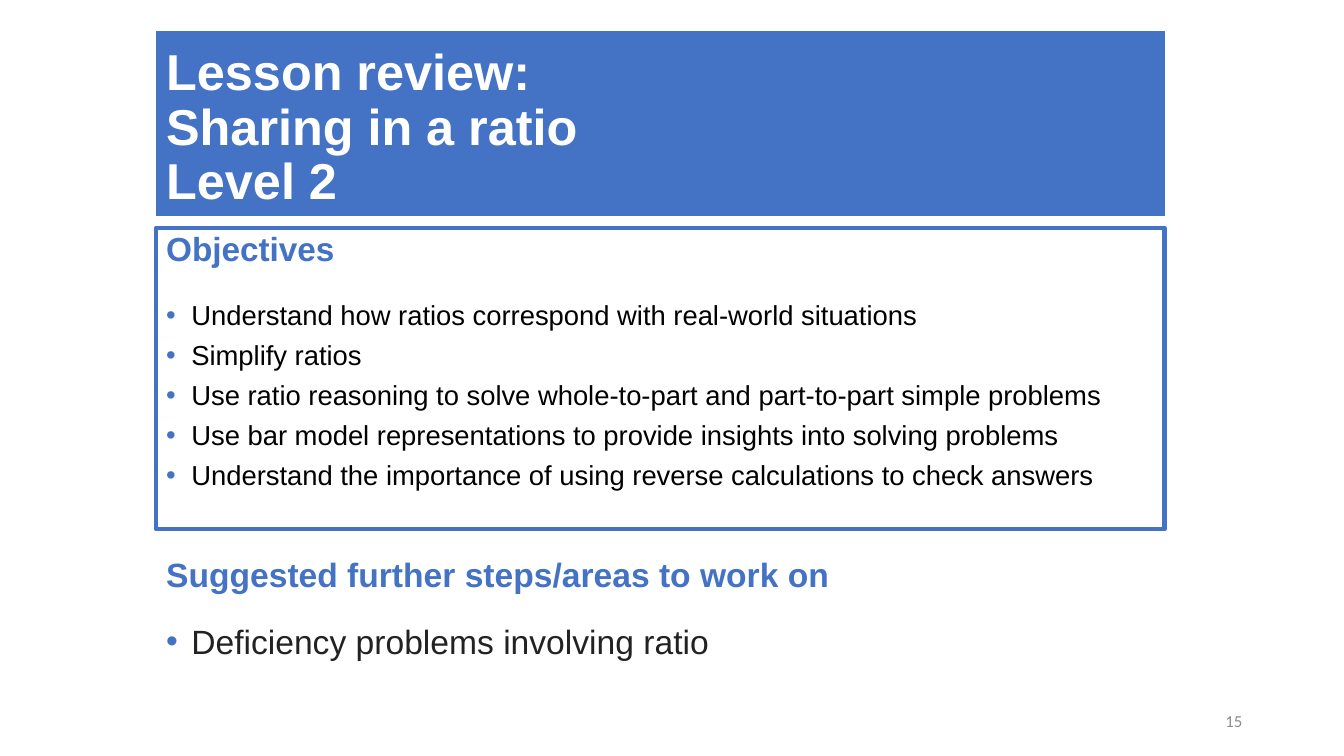
from lxml.etree import SubElement
from pptx import Presentation
from pptx.dml.color import RGBColor
from pptx.enum.shapes import MSO_SHAPE
from pptx.enum.text import MSO_ANCHOR, PP_ALIGN
from pptx.oxml.ns import qn
from pptx.util import Inches, Pt

COLORS = {"blue": "4472C4", "white": "FFFFFF", "black": "000000",
          "dark": "222222", "grey": "8C8C8C"}
OBJECTIVES = [
    "Understand how ratios correspond with real-world situations",
    "Simplify ratios",
    "Use ratio reasoning to solve whole-to-part and part-to-part simple problems",
    "Use bar model representations to provide insights into solving problems",
    "Understand the importance of using reverse calculations to check answers",
]


def rgb(name):
    """Return the named colour."""
    return RGBColor.from_string(COLORS[name])


def add_bullet(p):
    """Give a paragraph a hanging blue bullet."""
    pPr = p._p.get_or_add_pPr()
    pPr.set("marL", str(Inches(0.25)))
    pPr.set("indent", str(-Inches(0.25)))
    SubElement(SubElement(pPr, qn("a:buClr")), qn("a:srgbClr"), val=COLORS["blue"])
    SubElement(pPr, qn("a:buFont"), typeface="Arial")
    SubElement(pPr, qn("a:buChar"), char="•")


def add_text(tf, text, size=24, color="blue", bold=False, font="Arial",
             align=PP_ALIGN.LEFT, spacing=1.0, before=0, after=0, bullet=False):
    """Add a formatted paragraph, using the first one while it is empty."""
    p = tf.paragraphs[0] if not tf.text else tf.add_paragraph()
    p.text = text
    p.alignment, p.line_spacing = align, spacing
    p.space_before, p.space_after = Pt(before), Pt(after)
    for r in p.runs:
        r.font.size, r.font.bold, r.font.name = Pt(size), bold, font
        r.font.color.rgb = rgb(color)
    if bullet:
        add_bullet(p)


def add_frame(s, box, anchor=MSO_ANCHOR.TOP):
    """Add a wrapping text box and return its text frame."""
    tf = s.shapes.add_textbox(*map(Inches, box)).text_frame
    tf.word_wrap, tf.vertical_anchor = True, anchor
    return tf


def add_panel(s, box, line, fill=None, anchor=MSO_ANCHOR.TOP):
    """Add a blue-outlined rectangle and return its text frame."""
    sp = s.shapes.add_shape(MSO_SHAPE.RECTANGLE, *map(Inches, box))
    sp.shadow.inherit = False
    sp.line.color.rgb, sp.line.width = rgb("blue"), Pt(line)
    if fill:
        sp.fill.solid()
        sp.fill.fore_color.rgb = rgb(fill)
    else:
        sp.fill.background()
    tf = sp.text_frame
    tf.word_wrap, tf.vertical_anchor = True, anchor
    return tf


def add_title(s, box):
    """Place the filled lesson title."""
    tf = add_panel(s, box, 0.75, "blue", MSO_ANCHOR.BOTTOM)
    add_text(tf, "Lesson review:\vSharing in a ratio\vLevel 2", size=36,
             color="white", bold=True, spacing=0.9)


def add_objectives(s, box):
    """Place the outlined list of objectives."""
    tf = add_panel(s, box, 3)
    add_text(tf, "Objectives", size=23.8, bold=True, spacing=0.91, after=21)
    for text in OBJECTIVES:
        add_text(tf, text, size=19.6, color="black", after=5, bullet=True)


def add_next_steps(s, box):
    """Place the suggested further steps."""
    tf = add_frame(s, box)
    add_text(tf, "Suggested further steps/areas to work on", bold=True, spacing=1.11)
    add_text(tf, "Deficiency problems involving ratio", color="dark",
             spacing=1.11, before=16, bullet=True)


def add_page_number(s, box):
    """Place the page number."""
    add_text(add_frame(s, box, MSO_ANCHOR.MIDDLE), "15", size=12, color="grey",
             font="Calibri", align=PP_ALIGN.RIGHT)


def main():
    """Build and save the slide."""
    prs = Presentation()
    prs.slide_width, prs.slide_height = Inches(13.33), Inches(7.5)
    s = prs.slides.add_slide(prs.slide_layouts[6])
    add_title(s, (1.55, 0.31, 10, 1.83))
    add_objectives(s, (1.55, 2.26, 10, 2.99))
    add_next_steps(s, (1.55, 5.4, 10.86, 1.43))
    add_page_number(s, (9.42, 6.95, 3, 0.4))
    prs.save("out.pptx")


if __name__ == "__main__":
    main()
